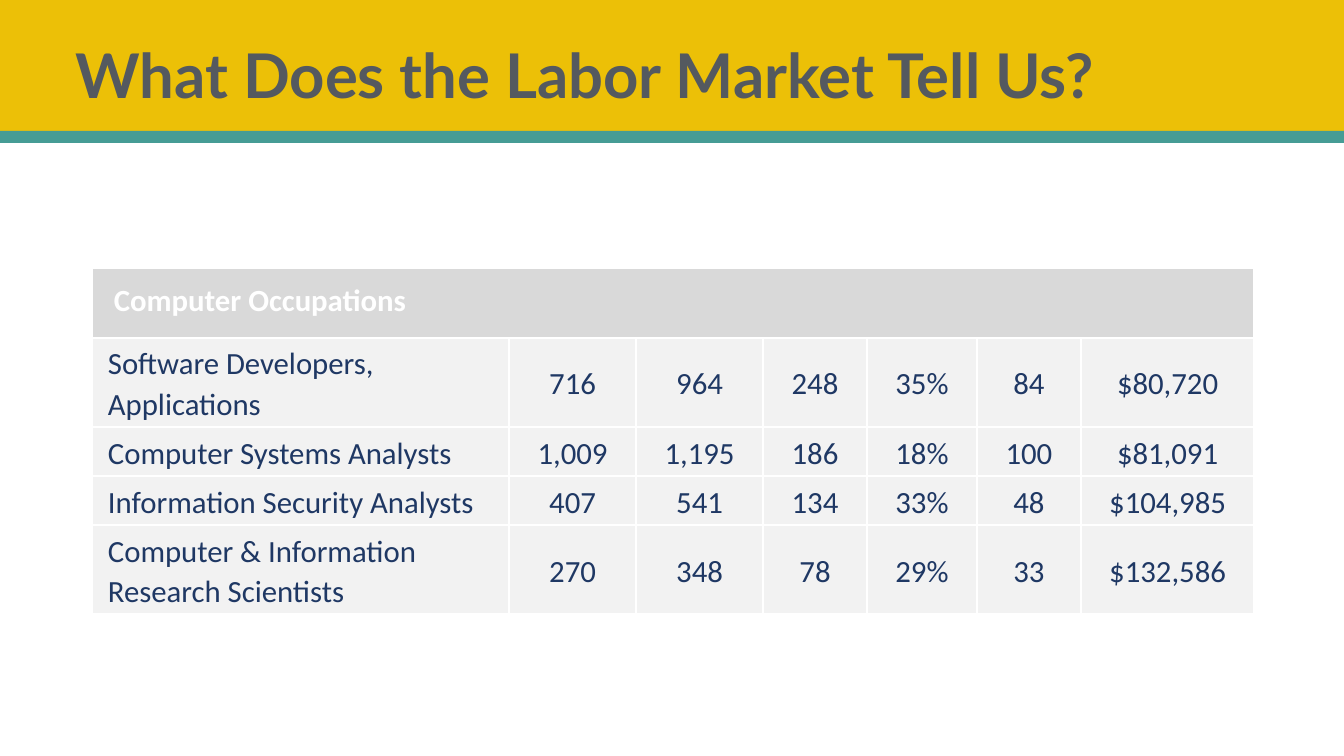
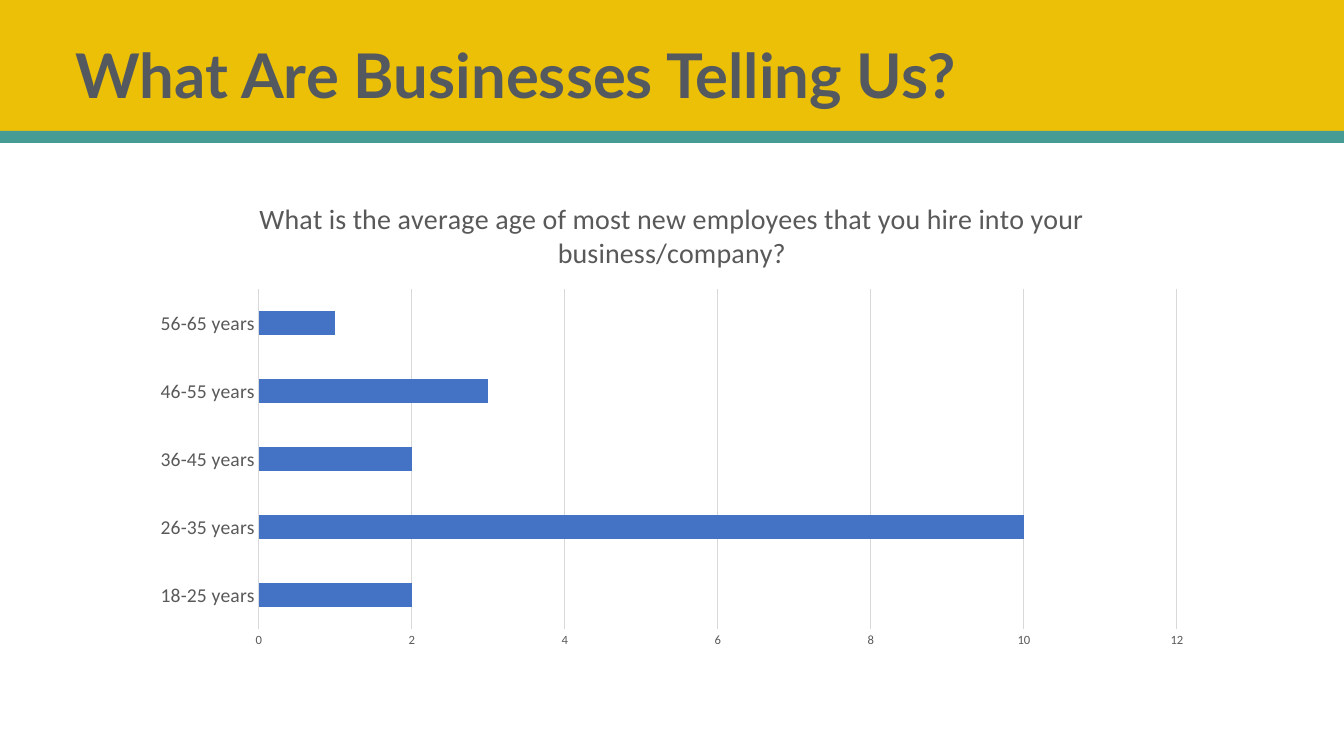
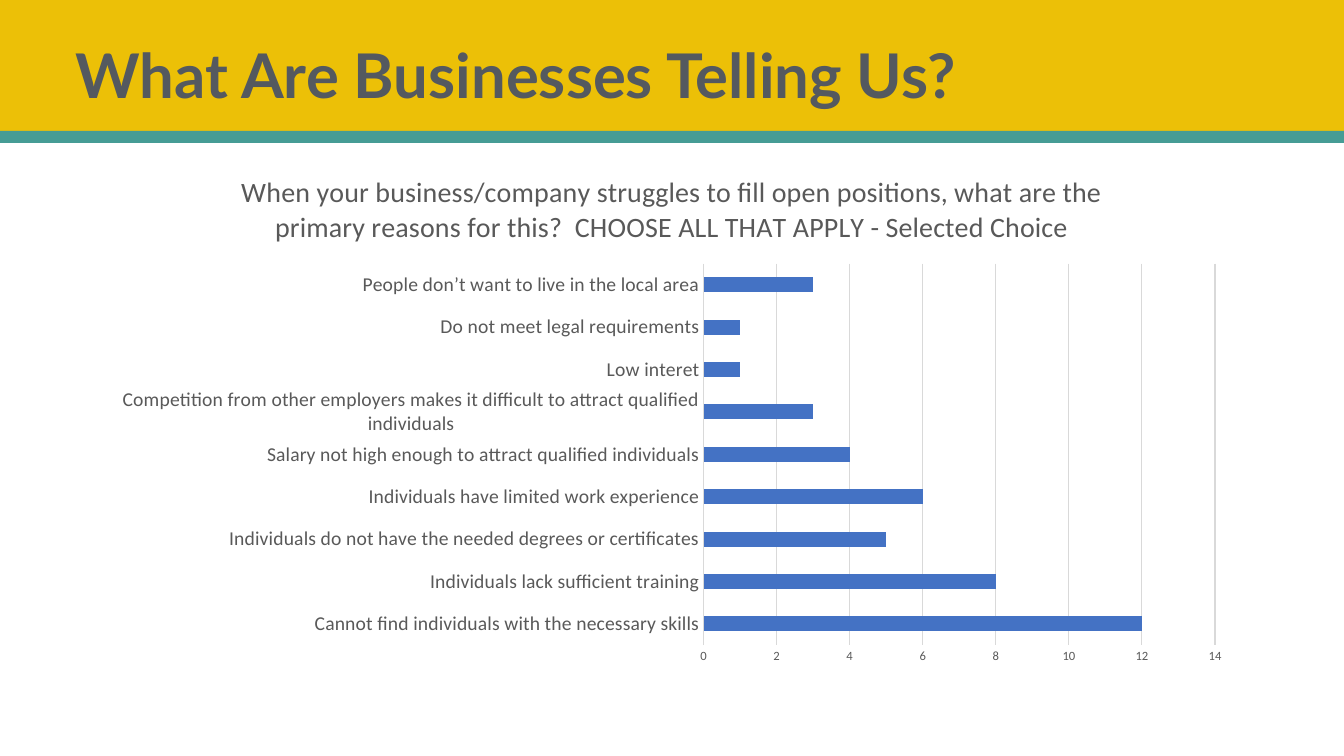
from lxml.etree import SubElement
from pptx import Presentation
from pptx.chart.data import CategoryChartData
from pptx.dml.color import RGBColor
from pptx.enum.chart import XL_CHART_TYPE, XL_TICK_MARK
from pptx.enum.shapes import MSO_SHAPE
from pptx.enum.text import MSO_ANCHOR, PP_ALIGN
from pptx.oxml.ns import qn
from pptx.util import Cm, Pt

SLIDE_WIDTH = 33.87
SLIDE_HEIGHT = 19.05
GOLD = "ECC007"
TEAL = "469C95"
SLATE = "54595F"
NAVY = "1F3864"
WHITE = "FFFFFF"
HEADER_GRAY = "D9D9D9"
ROW_GRAY = "F2F2F2"
GRID_GRAY = "D9D9D9"
CHART_TEXT = "595959"
BAR_BLUE = "4472C4"


def color(hex_string):
    return RGBColor.from_string(hex_string)


def style_font(font, size, ink, name="Calibri", bold=False):
    font.name = name
    font.size = Pt(size)
    font.bold = bold
    font.color.rgb = color(ink)


def write(frame, text, size, ink, name="Calibri", bold=False, align=None, spacing=None):
    paragraph = frame.paragraphs[0]
    paragraph.alignment = align
    paragraph.line_spacing = spacing
    run = paragraph.add_run()
    run.text = text
    style_font(run.font, size, ink, name, bold)


def border(cell, ink, width):
    properties = cell._tc.get_or_add_tcPr()
    for side in ("a:lnL", "a:lnR", "a:lnT", "a:lnB"):
        edge = SubElement(properties, qn(side), w=str(Pt(width)))
        SubElement(SubElement(edge, qn("a:solidFill")), qn("a:srgbClr"), val=ink)


class Deck:
    def __init__(self):
        self.presentation = Presentation()
        self.presentation.slide_width = Cm(SLIDE_WIDTH)
        self.presentation.slide_height = Cm(SLIDE_HEIGHT)
        self.layout = self.presentation.slide_layouts[5]
        self.slide = None

    def start_slide(self, heading):
        first = self.slide is None
        self.slide = self.presentation.slides.add_slide(self.layout)
        if first:
            self.dress_layout()
        title = self.slide.shapes.title
        title.left, title.top = Cm(1.65), Cm(0.13)
        title.width, title.height = Cm(29.21), Cm(3.68)
        title.text_frame.vertical_anchor = MSO_ANCHOR.MIDDLE
        write(title.text_frame, heading, size=44, ink=SLATE, name="Lato",
              bold=True, align=PP_ALIGN.LEFT, spacing=0.9)

    def dress_layout(self):
        tree = self.layout.shapes.element
        for placeholder in list(self.layout.placeholders)[1:]:
            tree.remove(placeholder.element)
        bands = [self.band(0, 3.58, GOLD), self.band(3.3, 0.3, TEAL)]
        for position, band in enumerate(bands, start=2):
            tree.insert(position, band.element)

    def band(self, top, height, fill):
        band = self.slide.shapes.add_shape(
            MSO_SHAPE.RECTANGLE, 0, Cm(top), Cm(SLIDE_WIDTH), Cm(height))
        band.shadow.inherit = False
        band.fill.solid()
        band.fill.fore_color.rgb = color(fill)
        band.line.fill.background()
        return band

    def cell(self, cell, fill, margins):
        sides = [Cm(margin) for margin in margins]
        cell.margin_left, cell.margin_top, cell.margin_right, cell.margin_bottom = sides
        border(cell, WHITE, 1.5)
        cell.fill.solid()
        cell.fill.fore_color.rgb = color(fill)

    def table(self, left, top, widths, heights, heading, rows):
        table = self.slide.shapes.add_table(
            len(heights), len(widths), Cm(left), Cm(top),
            Cm(sum(widths)), Cm(sum(heights))).table
        for column, width in zip(table.columns, widths):
            column.width = Cm(width)
        for row, height in zip(table.rows, heights):
            row.height = Cm(height)
        for header in table.rows[0].cells:
            self.cell(header, HEADER_GRAY, (0.56, 0.28, 0.56, 0.28))
        table.cell(0, 0).merge(table.cell(0, len(widths) - 1))
        write(table.cell(0, 0).text_frame, heading, size=22, ink=WHITE,
              bold=True, spacing=1.07)
        for row_index, row in enumerate(rows, start=1):
            for column_index, entry in enumerate(row):
                cell = table.cell(row_index, column_index)
                self.cell(cell, ROW_GRAY, (0.41, 0.05, 0.41, 0))
                cell.vertical_anchor = MSO_ANCHOR.MIDDLE
                write(cell.text_frame, entry, size=22, ink=NAVY, spacing=1.07,
                      align=PP_ALIGN.CENTER if column_index else PP_ALIGN.LEFT)

    def bar_chart(self, left, top, width, height, question, answers):
        survey = CategoryChartData()
        survey.categories = list(answers)
        survey.add_series("Series 1", list(answers.values()))
        chart = self.slide.shapes.add_chart(
            XL_CHART_TYPE.BAR_CLUSTERED, Cm(left), Cm(top),
            Cm(width), Cm(height), survey).chart
        chart.has_legend = False
        style_font(chart.font, 10, CHART_TEXT)
        chart.has_title = True
        write(chart.chart_title.text_frame, question, size=20, ink=CHART_TEXT)

        bars = chart.plots[0]
        bars.gap_width = 182
        bars.vary_by_categories = False
        bars.series[0].format.fill.solid()
        bars.series[0].format.fill.fore_color.rgb = color(BAR_BLUE)

        for axis, size in ((chart.category_axis, 14), (chart.value_axis, 9)):
            axis.major_tick_mark = axis.minor_tick_mark = XL_TICK_MARK.NONE
            style_font(axis.tick_labels.font, size, CHART_TEXT)
        counts = chart.value_axis
        counts.minimum_scale = 0
        counts.maximum_scale = max(answers.values()) + 2
        counts.major_unit = 2
        counts.format.line.fill.background()
        counts.has_major_gridlines = True
        for line in (chart.category_axis.format.line, counts.major_gridlines.format.line):
            line.width = Pt(0.75)
            line.color.rgb = color(GRID_GRAY)


def main():
    deck = Deck()

    deck.start_slide("What Does the Labor Market Tell Us?")
    deck.table(
        2.31, 6.76,
        widths=[10.52, 3.2, 3.2, 2.62, 2.77, 2.62, 4.37],
        heights=[1.75, 2.24, 1.24, 1.24, 2.24],
        heading="Computer Occupations",
        rows=[
            ("Software Developers, Applications", "716", "964", "248", "35%", "84", "$80,720"),
            ("Computer Systems Analysts", "1,009", "1,195", "186", "18%", "100", "$81,091"),
            ("Information Security Analysts", "407", "541", "134", "33%", "48", "$104,985"),
            ("Computer & Information Research Scientists",
             "270", "348", "78", "29%", "33", "$132,586"),
        ])

    business_heading = "What Are Businesses Telling Us?"
    deck.start_slide(business_heading)
    deck.bar_chart(
        3.51, 4.5, 26.85, 12.07,
        "What is the average age of most new employees that you hire into your "
        "business/company?",
        {
            "18-25 years": 2,
            "26-35 years": 10,
            "36-45 years": 2,
            "46-55 years": 3,
            "56-65 years": 1,
        })

    deck.start_slide(business_heading)
    deck.bar_chart(
        2.51, 3.81, 28.85, 13.18,
        "When your business/company struggles to fill open positions, what are the "
        "primary reasons for this?  CHOOSE ALL THAT APPLY - Selected Choice",
        {
            "Cannot find individuals with the necessary skills": 12,
            "Individuals lack sufficient training": 8,
            "Individuals do not have the needed degrees or certificates": 5,
            "Individuals have limited work experience": 6,
            "Salary not high enough to attract qualified individuals": 4,
            "Competition from other employers makes it difficult to attract "
            "qualified individuals": 3,
            "Low interet": 1,
            "Do not meet legal requirements": 1,
            "People don’t want to live in the local area": 3,
        })

    deck.presentation.save("out.pptx")


if __name__ == "__main__":
    main()
